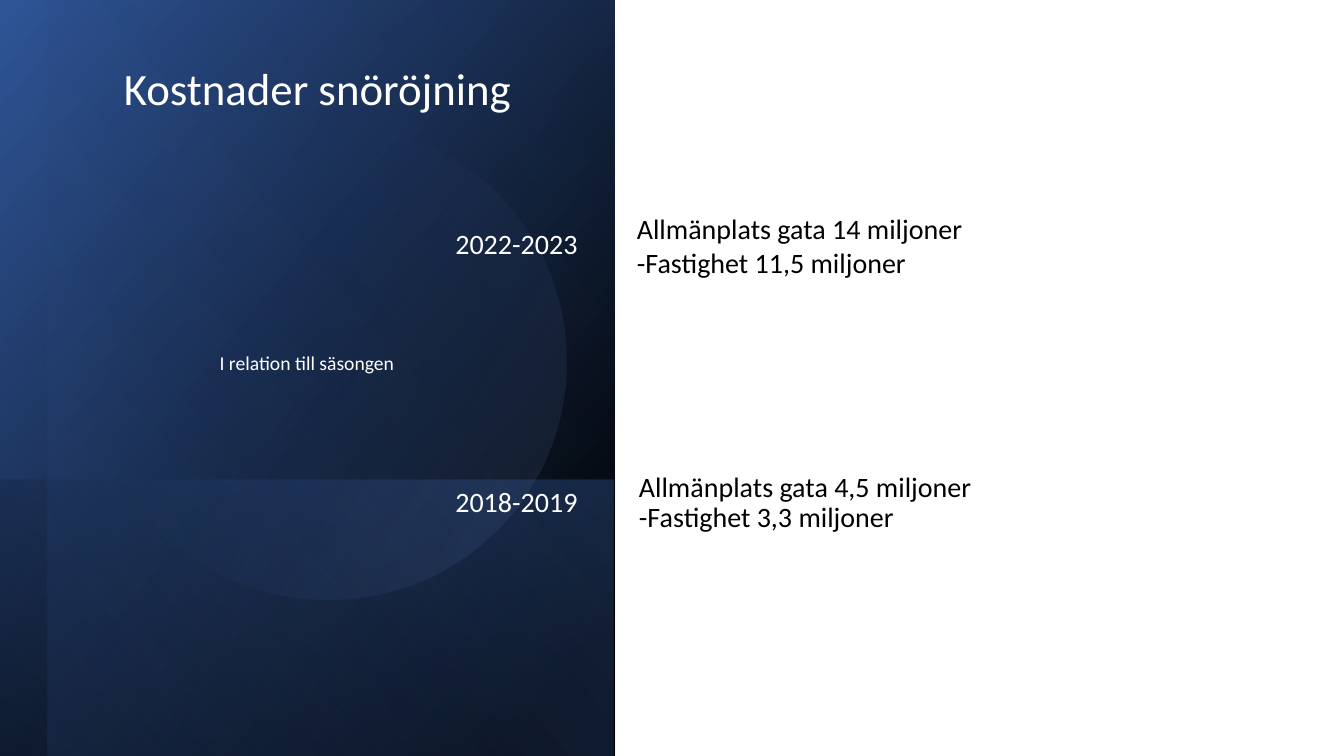
from lxml.etree import SubElement
from pptx import Presentation
from pptx.dml.color import RGBColor
from pptx.enum.shapes import MSO_SHAPE
from pptx.enum.text import MSO_ANCHOR
from pptx.oxml.ns import qn
from pptx.util import Pt

BLACK = RGBColor(0x00, 0x00, 0x00)
WHITE = RGBColor(0xFF, 0xFF, 0xFF)
BLUE = RGBColor(0x44, 0x72, 0xC4)
DARK_BLUE = RGBColor(0x2F, 0x55, 0x97)
LIGHT_BLUE = RGBColor(0x8F, 0xAA, 0xDC)

prs = Presentation()
prs.slide_width, prs.slide_height = Pt(960), Pt(540)
s = prs.slides.add_slide(prs.slide_layouts[6])

RECT, OVAL = MSO_SHAPE.RECTANGLE, MSO_SHAPE.OVAL
panels = [
    (RECT, (-50.4, 50.4, 540, 439.2), 90, 50, [(8, BLACK, 100), (100, DARK_BLUE, 100)]),
    (RECT, (120.2, 221.8, 197.3, 439.2), 90, 130, [(2, BLUE, 29), (100, BLACK, 30)]),
    (RECT, (-33.1, 67, 540, 405.4), 90, 130, [(0, BLACK, 0), (99, BLUE, 11)]),
    (OVAL, (64.8, 88.6, 339.8, 339.8), 101.6, 290, [(39, BLUE, 0), (100, LIGHT_BLUE, 15)]),
]
for kind, box, rotation, angle, stops in panels:
    sp = s.shapes.add_shape(kind, *[Pt(v) for v in box])
    sp.rotation = rotation
    sp.shadow.inherit = False
    sp.line.fill.background()
    if kind == RECT:
        sp.element.spPr.find(qn("a:xfrm")).set("flipH", "1")
    sp.fill.gradient()
    sp.fill.gradient_angle = 360 - angle
    for stop, (position, color, opacity) in zip(sp.fill.gradient_stops, stops):
        stop.position = position / 100
        stop.color.rgb = color
    for clr, (position, color, opacity) in zip(sp.element.spPr.iter(qn("a:srgbClr")), stops):
        if opacity < 100:
            SubElement(clr, qn("a:alpha")).set("val", str(opacity * 1000))

TOP, MIDDLE = MSO_ANCHOR.TOP, MSO_ANCHOR.MIDDLE
texts = [
    ("Allmänplats gata 4,5 miljoner\v-Fastighet 3,3 miljoner",
     (449.3, 315.4, 301, 88.6), 20, BLACK, MIDDLE, 0.9),
    ("2022-2023", (318.2, 158, 111.6, 53), 20, WHITE, TOP, 1),
    ("Kostnader snöröjning", (81.4, 39.6, 293, 46), 32, WHITE, TOP, 1),
    ("I relation till säsongen", (149.8, 247, 156.2, 46), 14, WHITE, TOP, 1),
    ("2018-2019", (318.2, 342.7, 102.2, 53.3), 20, WHITE, TOP, 1),
    ("Allmänplats gata 14 miljoner\v-Fastighet 11,5 miljoner",
     (447.8, 147.6, 287.3, 77.8), 20, BLACK, TOP, 1),
]
for text, box, size, color, anchor, spacing in texts:
    tf = s.shapes.add_textbox(*[Pt(v) for v in box]).text_frame
    tf.word_wrap = True
    tf.vertical_anchor = anchor
    p = tf.paragraphs[0]
    p.text = text
    p.line_spacing = spacing
    for r in p.runs:
        r.font.name = "Calibri"
        r.font.size = Pt(size)
        r.font.color.rgb = color

prs.save("out.pptx")
